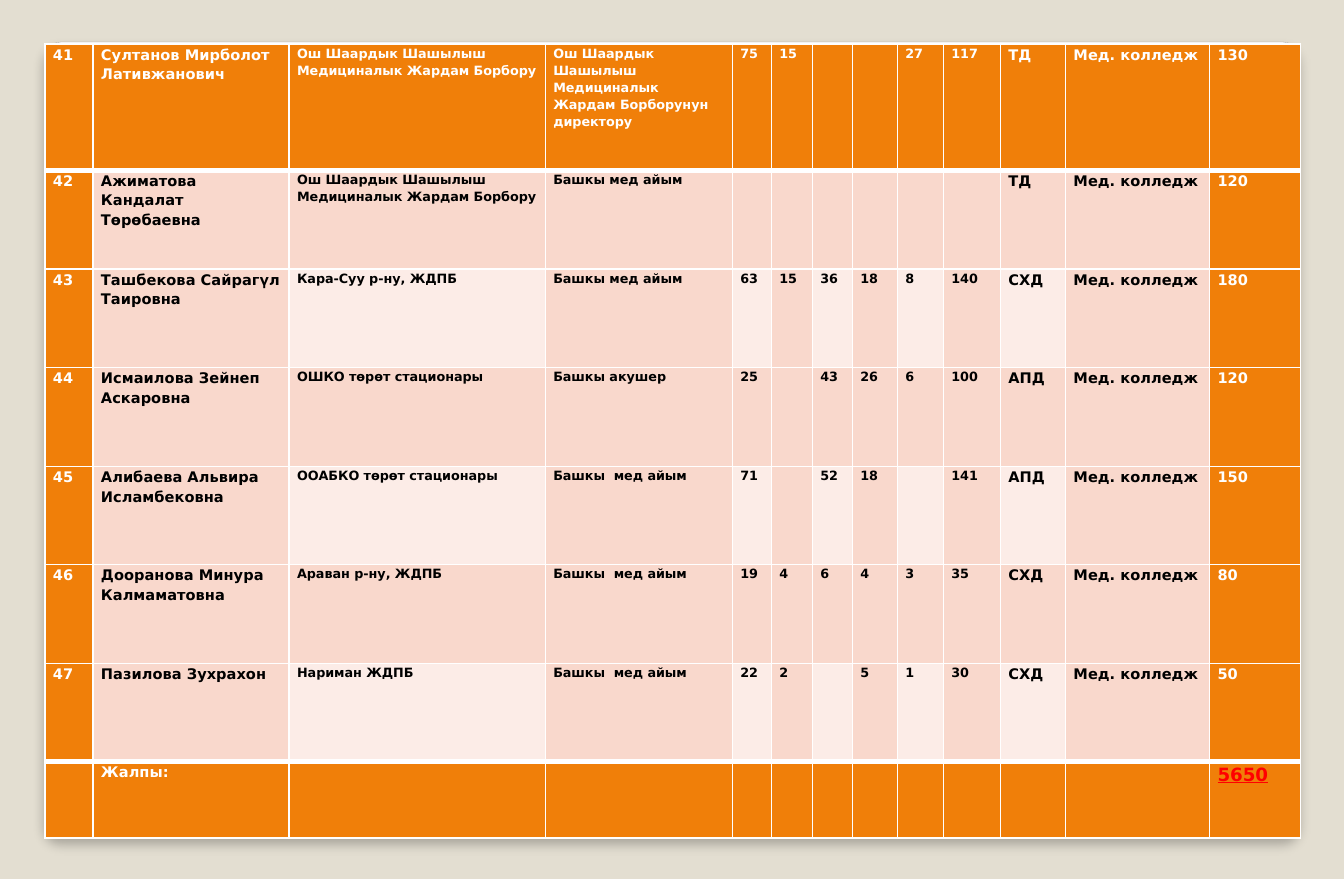
from lxml.etree import SubElement
from pptx import Presentation
from pptx.dml.color import RGBColor
from pptx.enum.shapes import MSO_SHAPE
from pptx.oxml.ns import qn
from pptx.util import Pt

PX = 6970  # EMU in one px
WIDE, HIGH = 1343, 878
FONT = "DejaVu Sans"
ORANGE, PINK, PALE = "F07F09", "F9D8CC", "FCECE7"
WHITE, BLACK, RED = "FFFFFF", "000000", "FF0000"
SAND, GREY = "E3DED1", "A4A4A4"

LEFT, TOP = 45, 44
COLS = [48, 196, 256, 187, 39, 41, 40, 45, 46, 57, 65, 144, 91]
ROWS = [126, 99, 98, 99, 98, 99, 98, 76]
CARD = (45, 42, 1253, 794)

CENTRE = "Ош Шаардык Шашылыш  Медициналык Жардам Борбору"
SCHOOL = "Мед. колледж"
STAFF = [
    ("41", "Султанов Мирболот Лативжанович", CENTRE,
     "Ош Шаардык Шашылыш  Медициналык Жардам Борборунун директору",
     "75", "15", "", "", "27", "117", "ТД", SCHOOL, "130"),
    ("42", "Ажиматова Кандалат Төрөбаевна", CENTRE, "Башкы мед айым",
     "", "", "", "", "", "", "ТД", SCHOOL, "120"),
    ("43", "Ташбекова Сайрагүл Таировна", "Кара-Суу р-ну, ЖДПБ", "Башкы мед айым",
     "63", "15", "36", "18", "8", "140", "СХД", SCHOOL, "180"),
    ("44", "Исмаилова Зейнеп Аскаровна", "ОШКО төрөт стационары", "Башкы акушер",
     "25", "", "43", "26", "6", "100", "АПД", SCHOOL, "120"),
    ("45", "Алибаева Альвира Исламбековна", "ООАБКО төрөт стационары", "Башкы  мед айым",
     "71", "", "52", "18", "", "141", "АПД", SCHOOL, "150"),
    ("46", "Дооранова Минура Калмаматовна", "Араван р-ну, ЖДПБ", "Башкы  мед айым",
     "19", "4", "6", "4", "3", "35", "СХД", SCHOOL, "80"),
    ("47", "Пазилова Зухрахон", "Нариман ЖДПБ", "Башкы  мед айым",
     "22", "2", "", "5", "1", "30", "СХД", SCHOOL, "50"),
    ("", "Жалпы:", *[""] * 10, "5650"),
]
END_ROW, END_COL = len(ROWS) - 1, len(COLS) - 1


def rgb(code):
    return RGBColor.from_string(code)


def paint(thing, code):
    thing.fill.solid()
    thing.fill.fore_color.rgb = rgb(code)


def add_color(node, code):
    return SubElement(node, qn("a:srgbClr"), val=code)


def add_card(slide):
    """Rounded white card whose soft shadow shows around the table."""
    card = slide.shapes.add_shape(MSO_SHAPE.ROUNDED_RECTANGLE, *[n * PX for n in CARD])
    card.adjustments[0] = 0.02
    card.shadow.inherit = False
    paint(card, WHITE)
    card.line.color.rgb = rgb(GREY)
    card.line.width = Pt(0.16)
    glow = SubElement(card.element.spPr.find(qn("a:effectLst")), qn("a:outerShdw"),
                      blurRad=str(Pt(6)), dist=str(Pt(4)), dir="5400000",
                      algn="t", rotWithShape="0")
    SubElement(add_color(glow, BLACK), qn("a:alpha"), val="25000")


def add_edges(cell, row):
    above = 3 if row in (1, END_ROW) else 1
    below = 3 if row in (0, END_ROW - 1) else 1
    props = cell._tc.get_or_add_tcPr()
    for side, width in (("L", 1), ("R", 1), ("T", above), ("B", below)):
        edge = SubElement(props, qn(f"a:ln{side}"), w=str(Pt(width)))
        add_color(SubElement(edge, qn("a:solidFill")), WHITE)


def is_dark(row, col):
    return row in (0, END_ROW) or col in (0, END_COL)


def back(row, col):
    if is_dark(row, col):
        return ORANGE
    return PALE if row % 2 == 0 and col % 2 == 0 else PINK


def write(cell, text, row, col):
    para = cell.text_frame.paragraphs[0]
    para.line_spacing = 1.15
    run = para.add_run()
    run.text = text
    font = run.font
    font.name, font.bold = FONT, True
    font.size = Pt(7 if 2 <= col <= 9 else 8)
    font.color.rgb = rgb(WHITE if is_dark(row, col) else BLACK)
    if (row, col) == (END_ROW, END_COL):
        font.size, font.underline = Pt(10), True
        font.color.rgb = rgb(RED)


def add_staff(slide):
    table = slide.shapes.add_table(len(ROWS), len(COLS), LEFT * PX, TOP * PX,
                                   sum(COLS) * PX, sum(ROWS) * PX).table
    for col, width in zip(table.columns, COLS):
        col.width = width * PX
    for row, height in zip(table.rows, ROWS):
        row.height = height * PX
    for r, person in enumerate(STAFF):
        for c, text in enumerate(person):
            cell = table.cell(r, c)
            add_edges(cell, r)
            paint(cell, back(r, c))
            cell.margin_left = cell.margin_right = 8 * PX
            cell.margin_top = cell.margin_bottom = 0
            if text:
                write(cell, text, r, c)


def main():
    deck = Presentation()
    deck.slide_width, deck.slide_height = WIDE * PX, HIGH * PX
    slide = deck.slides.add_slide(deck.slide_layouts[6])
    paint(slide.background, SAND)
    add_card(slide)
    add_staff(slide)
    deck.save("out.pptx")


if __name__ == "__main__":
    main()
